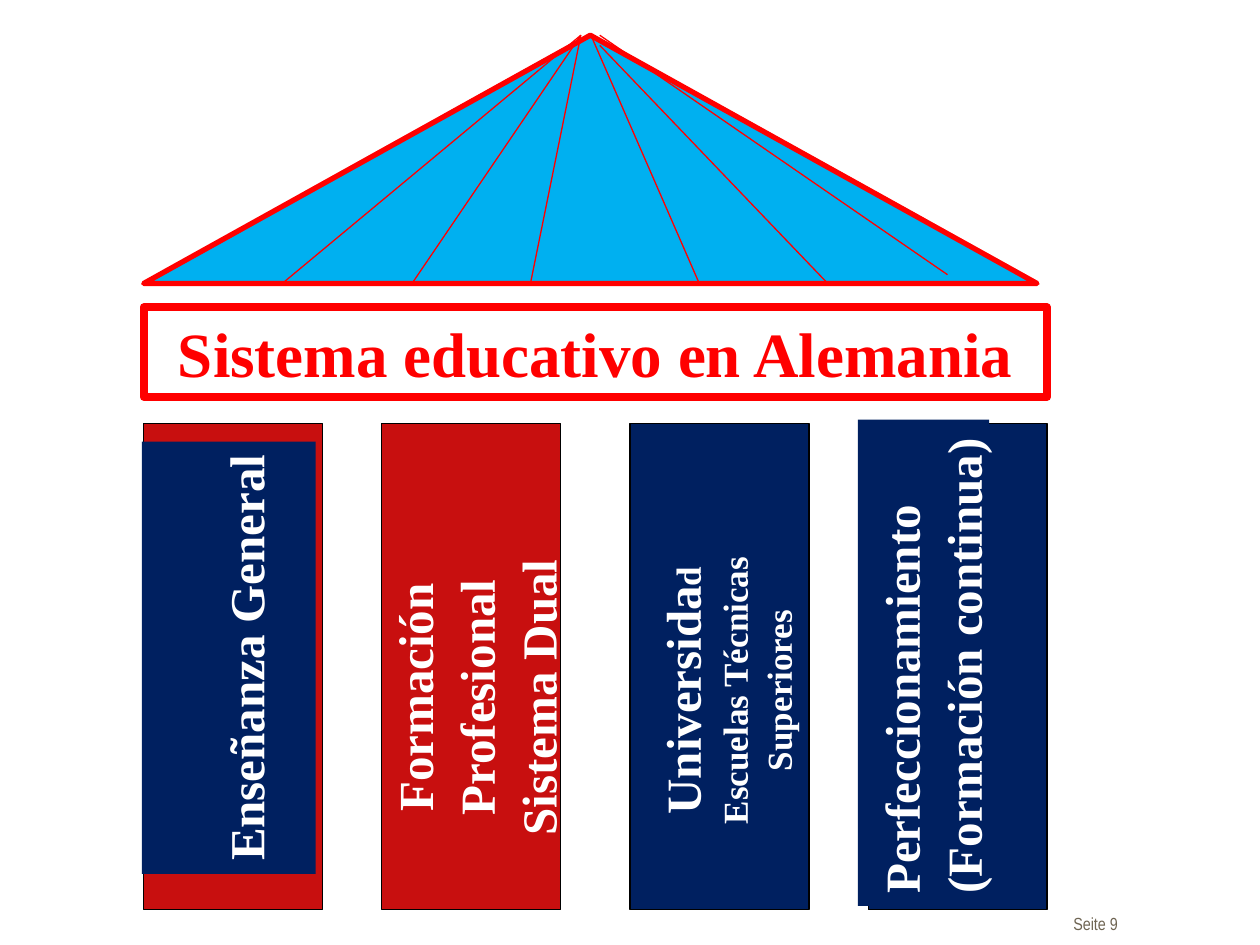
from pptx import Presentation
from pptx.dml.color import RGBColor as RGB
from pptx.enum.shapes import MSO_CONNECTOR as LINK, MSO_SHAPE as FORM
from pptx.enum.text import MSO_ANCHOR as ANCHOR, MSO_AUTO_SIZE as FIT, PP_ALIGN as ALIGN
from pptx.oxml.ns import qn
from pptx.util import Inches, Pt

deck = Presentation()
deck.slide_width, deck.slide_height = Inches(10), Inches(7.5)
slide = deck.slides.add_slide(deck.slide_layouts[5])
shapes = slide.shapes


def place(*shares):
    sides = (deck.slide_width, deck.slide_height) * 2
    return [int(side * share / 100) for side, share in zip(sides, shares)]


def style(part, fill=None, line=None, width=1, **looks):
    if fill:
        part.fill.solid()
        part.fill.fore_color.rgb = RGB.from_string(fill)
    elif fill == "":
        part.fill.background()
    if line:
        part.line.color.rgb = RGB.from_string(line)
        part.line.width = Pt(width)
    elif line == "":
        part.line.fill.background()
    if "color" in looks:
        part.color.rgb = RGB.from_string(looks.pop("color"))
    for name, value in looks.items():
        setattr(part, name, value)


RED, NAVY, BRICK, WHITE = "FF0000", "002060", "C80F0F", "FFFFFF"
SERIF = dict(name="Times New Roman", bold=True)

roof = shapes.add_shape(FORM.FLOWCHART_EXTRACT, *place(11.4, 3.73, 70.9, 26.27))
roof.shadow.inherit = False
style(roof, "00B0F0", RED, 3)

rays = [
    (46.1, 3.73, 42.1, 30),
    (46.1, 3.73, 32.7, 30),
    (46.1, 3.73, 22.4, 30),
    (46.9, 3.73, 55.5, 30),
    (47.6, 4.8, 65.7, 30),
    (47.6, 3.73, 75.2, 29.07),
]
for ends in rays:
    ray = shapes.add_connector(LINK.STRAIGHT, *place(*ends))
    style(ray, line=RED, width=0.75)
    props = ray._element.spPr
    props.append(props.makeelement(qn("a:effectLst"), {}))

title = shapes.title
title.left, title.top, title.width, title.height = place(11.4, 32.53, 71.7, 9.47)
style(title, WHITE, RED, 4.5)
title.text = "Sistema educativo en Alemania"
style(title.text_frame, auto_size=FIT.NONE, vertical_anchor=ANCHOR.MIDDLE)
head = title.text_frame.paragraphs[0]
head.alignment = ALIGN.CENTER
style(head.runs[0].font, size=Pt(36), color=RED, **SERIF)

pillars = [
    (11.4, BRICK, NAVY, (1, 60.4, 34.3, 18.4), False, 0.56, ALIGN.CENTER,
     [[("Enseñanza General", 28)]]),
    (30.3, BRICK, "", (24.8, 61.47, 27.8, 24.67), True, 0.08, ALIGN.CENTER,
     [[("Formación", 28)], [("Profesional Sistema Dual", 28)]]),
    (50, NAVY, NAVY, (43.5, 64.8, 26.8, 16.53), True, 0.08, ALIGN.CENTER,
     [[("Universida", 28), ("d Escuelas Técnicas Superiores", 20)]]),
    (68.9, NAVY, NAVY, (54, 63.2, 38.6, 13.87), False, 0.08, ALIGN.LEFT,
     [[("Perfeccionamiento", 28)], [("(Formación continua)", 28)]]),
]
for left, tone, back, area, wrap, inset, side, paras in pillars:
    group = shapes.add_group_shape().shapes
    pillar = group.add_shape(FORM.RECTANGLE, *place(left, 44.8, 14.2, 51.47))
    pillar.shadow.inherit = False
    style(pillar, tone, "000000", 0.75)
    label = group.add_shape(FORM.RECTANGLE, *place(*area))
    label.shadow.inherit = False
    style(label, back, "", rotation=270)
    frame = label.text_frame
    style(frame, word_wrap=wrap, margin_top=Inches(inset), vertical_anchor=ANCHOR.TOP)
    for count, runs in enumerate(paras):
        para = frame.add_paragraph() if count else frame.paragraphs[0]
        style(para, alignment=side, line_spacing=1.05)
        for words, size in runs:
            run = para.add_run()
            run.text = words
            style(run.font, size=Pt(size), color=WHITE, **SERIF)

page = shapes.add_textbox(*place(84.2, 96, 10.1, 3.6))
page.text_frame.word_wrap = True
page.text_frame.text = "Seite 9"
style(page.text_frame.paragraphs[0].runs[0].font,
      name="Arial Narrow", size=Pt(10), color="6E6452")

deck.save("out.pptx")
